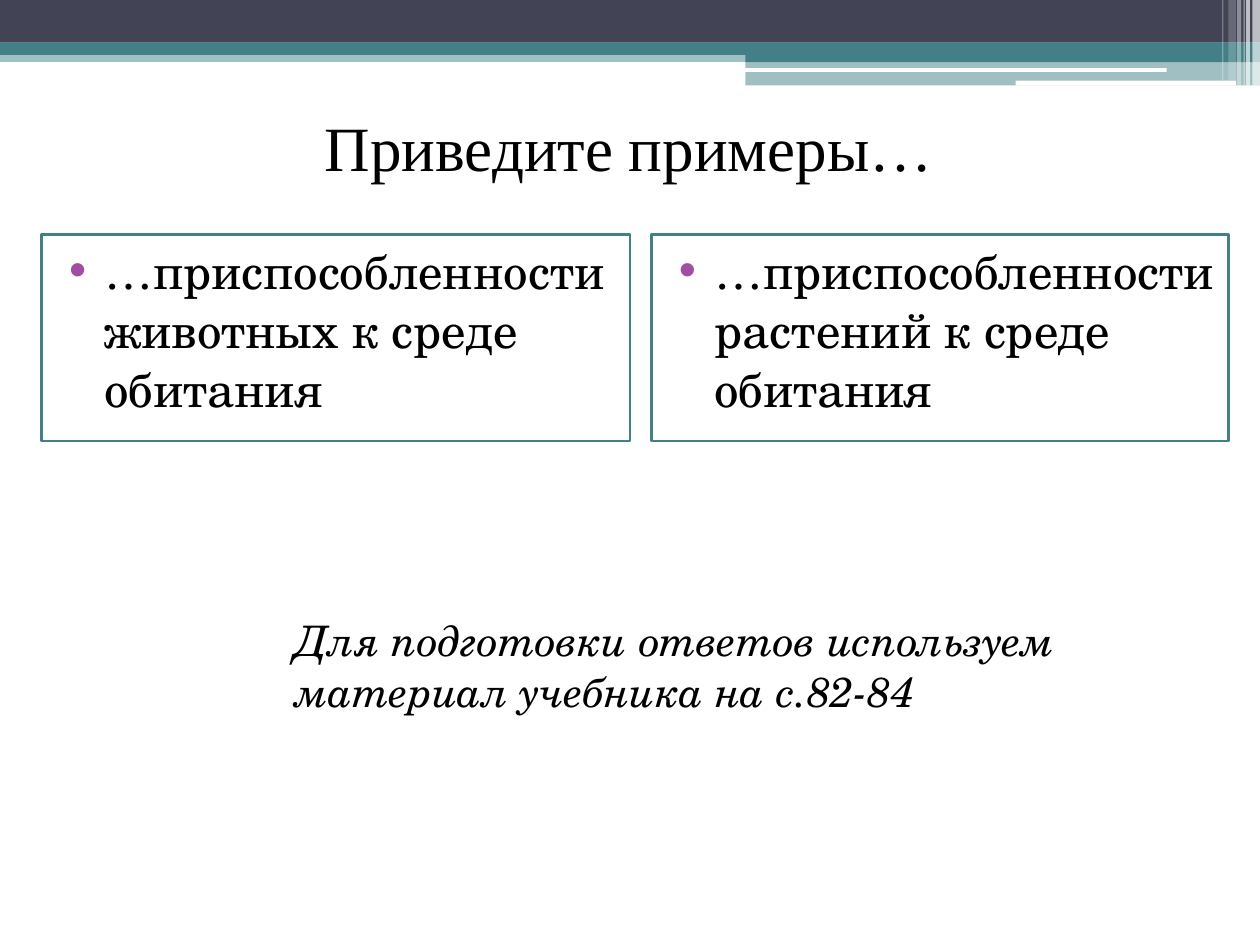
from lxml.etree import SubElement
from pptx import Presentation
from pptx.dml.color import RGBColor
from pptx.enum.shapes import MSO_SHAPE
from pptx.enum.text import MSO_ANCHOR, PP_ALIGN
from pptx.oxml.ns import qn
from pptx.util import Pt

TEAL, NAVY, WHITE, BLACK, PURPLE = "438086", "424456", "FFFFFF", "000000", "A04DA3"
SERIF, SCHOOL = "Times New Roman", "TeX Gyre Schola"


def color(code):
    return RGBColor.from_string(code)


def apply(target, values):
    for key, value in values.items():
        setattr(target, key, value)


class LessonSlide:
    def __init__(self, deck):
        self.slide = deck.slides.add_slide(deck.slide_layouts[6])

    def band(self, left, top, width, height, fill, opacity=100, kind=MSO_SHAPE.RECTANGLE):
        band = self.slide.shapes.add_shape(kind, Pt(left), Pt(top), Pt(width), Pt(height))
        band.shadow.inherit = False
        band.fill.solid()
        band.fill.fore_color.rgb = color(fill)
        band.line.fill.background()
        if opacity < 100:
            tint = band._element.spPr.find(qn("a:solidFill"))[0]
            SubElement(tint, qn("a:alpha"), val=str(opacity * 1000))
        return band

    def add_lines(self, frame, lines, font, size, italic=False, align=PP_ALIGN.LEFT):
        for index, line in enumerate(lines):
            paragraph = frame.paragraphs[0] if index == 0 else frame.add_paragraph()
            paragraph.alignment = align
            run = paragraph.add_run()
            run.text = line
            apply(run.font, {"name": font, "size": Pt(size), "italic": italic})
            run.font.color.rgb = color(BLACK)

    def text(self, left, top, width, height, lines, font, size, frame_format, **style):
        box = self.slide.shapes.add_textbox(Pt(left), Pt(top), Pt(width), Pt(height))
        apply(box.text_frame, frame_format)
        self.add_lines(box.text_frame, lines, font, size, **style)

    def task(self, left, top, width, height, line):
        task = self.band(left, top, width, height, WHITE)
        task.line.color.rgb = color(TEAL)
        task.line.width = Pt(1.5)
        apply(task.text_frame, {"word_wrap": True, "vertical_anchor": MSO_ANCHOR.TOP})
        self.add_lines(task.text_frame, [line], SCHOOL, 28)
        paragraph = task.text_frame.paragraphs[0]
        paragraph.space_before = Pt(3)
        properties = paragraph._p.get_or_add_pPr()
        properties.set("marL", str(int(Pt(28.8))))
        properties.set("indent", str(-int(Pt(20.16))))
        bullet_color = SubElement(properties, qn("a:buClr"))
        SubElement(bullet_color, qn("a:srgbClr"), val=PURPLE)
        SubElement(properties, qn("a:buFont"), typeface="Arial")
        SubElement(properties, qn("a:buChar"), char="•")


def main():
    deck = Presentation()
    apply(deck, {"slide_width": Pt(720), "slide_height": Pt(540)})
    lesson = LessonSlide(deck)

    for left, top, height, fill, opacity in [
        (0, 28.8, 6.6, TEAL, 50),
        (0, 0, 24.4, NAVY, 100),
        (0, 24.2, 7.2, TEAL, 100),
        (426, 28.3, 7.2, TEAL, 100),
        (426, 34.6, 14.2, TEAL, 50),
    ]:
        lesson.band(left, top, 720 - left, height, fill, opacity)

    for left, top, width, height in [(425.5, 38.9, 241.2, 2.2), (580.3, 46.1, 126, 2.9)]:
        lesson.band(left, top, width, height, WHITE, kind=MSO_SHAPE.ROUNDED_RECTANGLE)

    for left, width, height, opacity in [
        (715.7, 4.3, 49, 65),
        (712.1, 2.2, 49, 65),
        (710.6, 0.72, 49, 60),
        (707, 2.2, 49, 40),
        (702, 4.3, 46, 20),
        (698.4, 0.72, 46, 30),
    ]:
        lesson.band(left, 0, width, height, WHITE, opacity)

    lesson.text(35.3, 59.8, 648, 48.2, ["Приведите примеры…"], SERIF, 36,
                {"word_wrap": True, "vertical_anchor": MSO_ANCHOR.MIDDLE},
                align=PP_ALIGN.CENTER)

    for left, width, subject in [(23.8, 336.2, "животных"), (372.2, 329.8, "растений")]:
        lesson.task(left, 133.9, width, 118.1,
                    f"…приспособленности {subject} к среде обитания")

    lesson.text(162, 347.8, 451.4, 65.5,
                ["Для подготовки ответов используем", "материал учебника на с.82-84"],
                SCHOOL, 24, {"word_wrap": False}, italic=True)

    deck.save("out.pptx")


if __name__ == "__main__":
    main()
